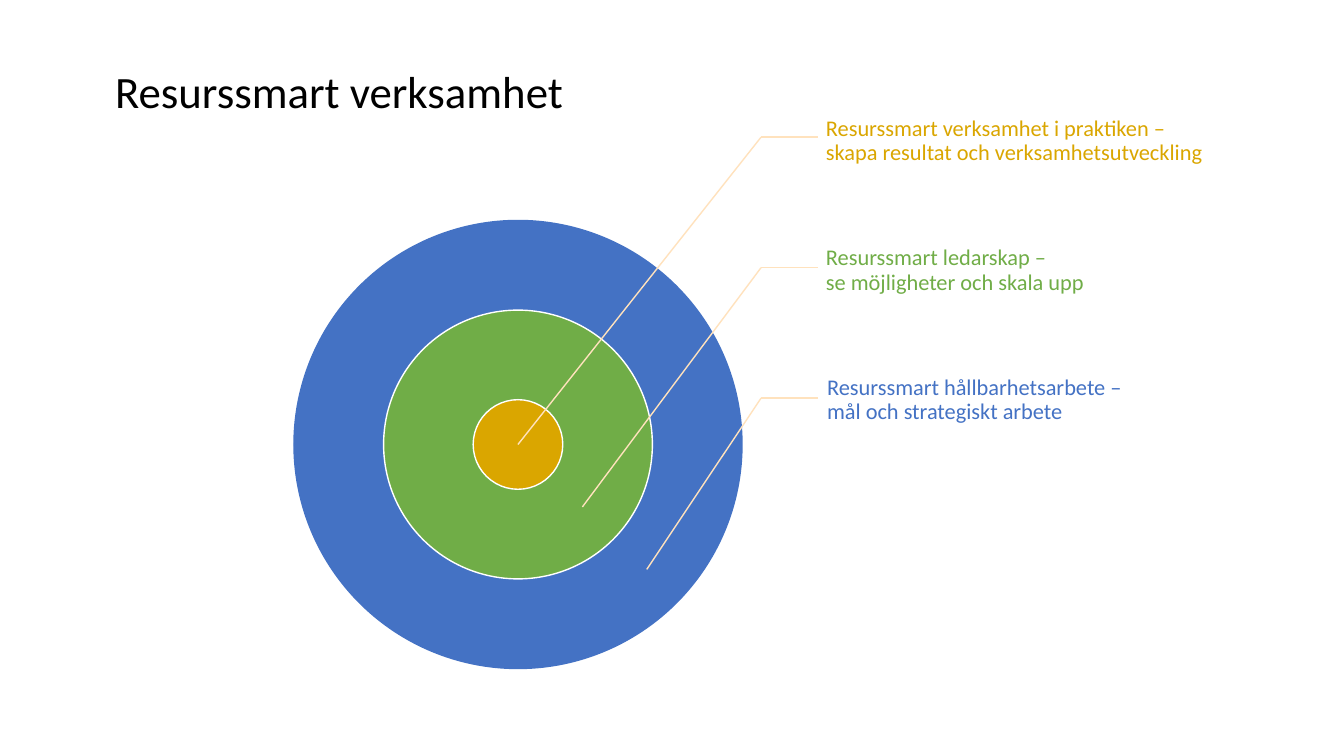
"""Build a slide with three concentric circles and a labelled leader for each."""
from lxml import etree
from pptx import Presentation
from pptx import util as u
from pptx.dml.color import RGBColor
from pptx.enum import shapes, text
from pptx.oxml import ns

BLACK = RGBColor(0x00, 0x00, 0x00)
WHITE = RGBColor(0xFF, 0xFF, 0xFF)
BLUE = RGBColor(0x44, 0x72, 0xC4)
GREEN = RGBColor(0x70, 0xAD, 0x47)
GOLD = RGBColor(0xDA, 0xA6, 0x00)
PEACH = RGBColor(0xFF, 0xE2, 0xBD)

FONT = "Calibri"
CENTRE_X, CENTRE_Y = 370, 317.5
ELBOW_X, LEADER_END_X = 543.6, 584
LABEL_HEIGHT = 93.6

CIRCLES = [(320, BLUE, BLUE), (192, GREEN, WHITE), (64, GOLD, WHITE)]
LABELS = [
    ("Resurssmart verksamhet i praktiken – \vskapa resultat och verksamhetsutveckling", 581, 304, GOLD),
    ("Resurssmart ledarskap – \vse möjligheter och skala upp", 581, 198, GREEN),
    ("Resurssmart hållbarhetsarbete – mål och strategiskt arbete", 581.8, 233.3, BLUE),
]


def format_runs(paragraph, size, color):
    for run in paragraph.runs:
        run.font.name = FONT
        run.font.size = u.Pt(size)
        run.font.color.rgb = color


def set_title(slide, title):
    shape = slide.shapes.title
    shape.left, shape.top = u.Pt(75), u.Pt(42)
    shape.width, shape.height = u.Pt(368), u.Pt(46)
    frame = shape.text_frame
    frame.text = title
    frame.word_wrap = True
    frame.vertical_anchor = text.MSO_ANCHOR.TOP
    paragraph = frame.paragraphs[0]
    paragraph.alignment = text.PP_ALIGN.LEFT
    format_runs(paragraph, 32, BLACK)


def add_circle(slide, diameter, fill, outline):
    shape = slide.shapes.add_shape(
        shapes.MSO_SHAPE.OVAL,
        u.Pt(CENTRE_X - diameter / 2), u.Pt(CENTRE_Y - diameter / 2),
        u.Pt(diameter), u.Pt(diameter),
    )
    shape.shadow.inherit = False
    shape.fill.solid()
    shape.fill.fore_color.rgb = fill
    shape.line.color.rgb = outline
    shape.line.width = u.Pt(1)


def add_label(slide, wording, left, top, width, color):
    box = slide.shapes.add_textbox(u.Pt(left), u.Pt(top), u.Pt(width), u.Pt(LABEL_HEIGHT))
    frame = box.text_frame
    frame.word_wrap = True
    frame.vertical_anchor = text.MSO_ANCHOR.MIDDLE
    frame.margin_left = u.Pt(9)
    frame.margin_top = frame.margin_right = frame.margin_bottom = u.Pt(1.5)
    paragraph = frame.paragraphs[0]
    paragraph.text = wording
    paragraph.line_spacing = 0.9
    format_runs(paragraph, 16, color)


def add_line(slide, start_x, start_y, end_x, end_y):
    line = slide.shapes.add_connector(
        shapes.MSO_CONNECTOR.STRAIGHT,
        u.Pt(start_x), u.Pt(start_y), u.Pt(end_x), u.Pt(end_y),
    )
    line.line.color.rgb = PEACH
    line.line.width = u.Pt(1)
    etree.SubElement(line.element.spPr, ns.qn("a:effectLst"))


def main():
    presentation = Presentation()
    presentation.slide_width, presentation.slide_height = u.Pt(960), u.Pt(540)
    slide = presentation.slides.add_slide(presentation.slide_layouts[5])
    set_title(slide, "Resurssmart verksamhet")
    for diameter, fill, outline in CIRCLES:
        add_circle(slide, diameter, fill, outline)
    for index, (wording, left, width, color) in enumerate(LABELS):
        leader_y = 98 + 93.2 * index
        add_label(slide, wording, left, 54 + 92.6 * index, width, color)
        add_line(slide, ELBOW_X, leader_y, LEADER_END_X, leader_y)
        add_line(slide, ELBOW_X, leader_y, CENTRE_X + 46 * index, CENTRE_Y + 44.6 * index)
    presentation.save("out.pptx")


if __name__ == "__main__":
    main()
